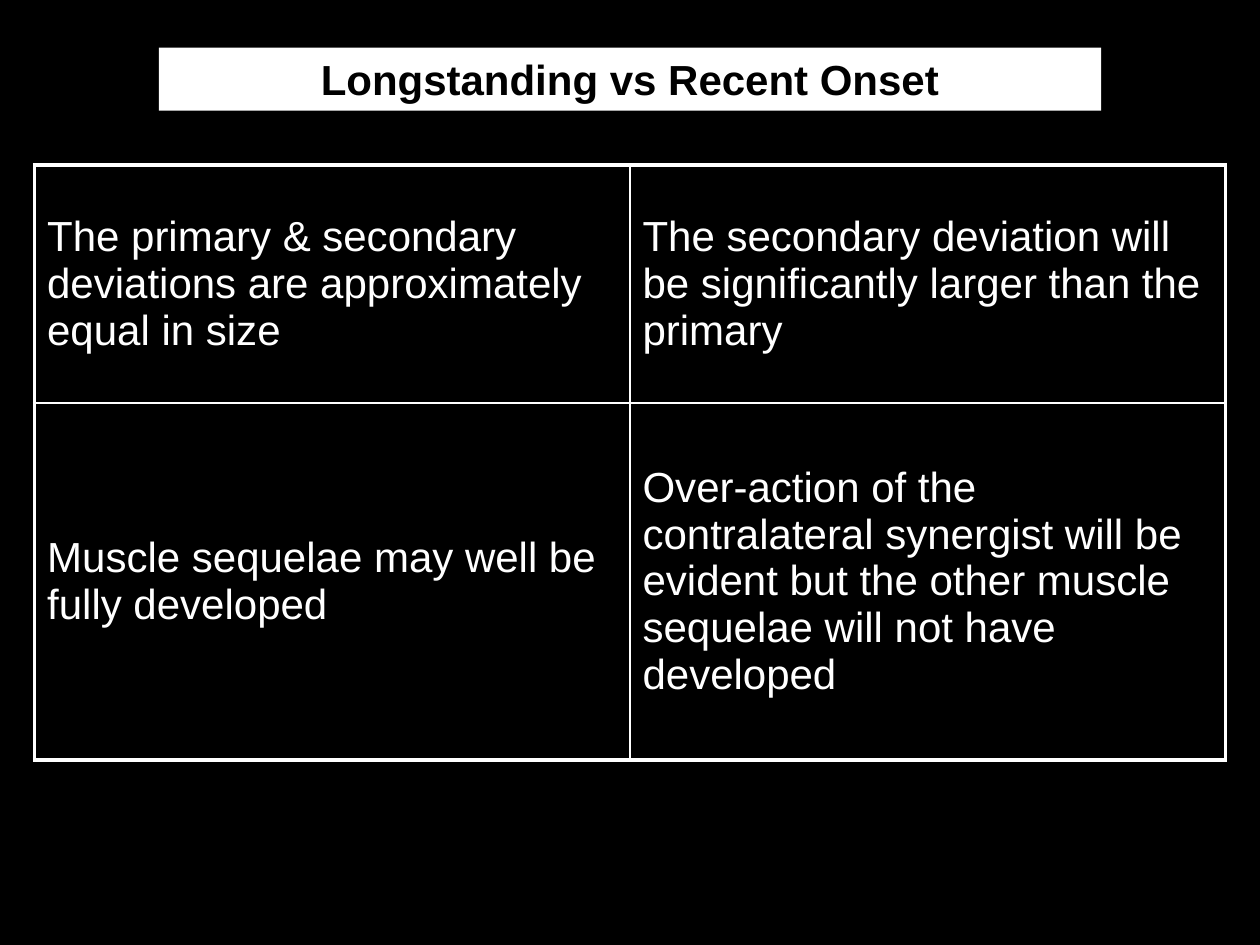
from lxml.etree import SubElement
from pptx import Presentation
from pptx.dml.color import RGBColor
from pptx.enum.text import MSO_ANCHOR as ANCHOR, PP_ALIGN as ALIGN
from pptx.oxml.ns import qn
from pptx.util import Pt

BLACK = RGBColor(0x00, 0x00, 0x00)
WHITE = RGBColor(0xFF, 0xFF, 0xFF)
FONT = "Arial"
SIZE = 24
OUTER, INNER = 2.25, 1

ROWS = [
    ["The primary & secondary deviations are approximately equal in size",
     "The secondary deviation will be significantly larger than the primary"],
    ["Muscle sequelae may well be fully developed",
     "Over-action of the contralateral synergist will be evident but the "
     "other muscle sequelae will not have developed"],
]


def write(tf, text, color=WHITE, bold=False, align=ALIGN.LEFT):
    p = tf.paragraphs[0]
    p.alignment = align
    p.line_spacing = 1.0
    p.space_before = Pt(0)
    r = p.add_run()
    r.text = text
    r.font.name, r.font.size, r.font.bold = FONT, Pt(SIZE), bold
    r.font.color.rgb = color


def add_border(cell, side, width):
    ln = SubElement(cell._tc.get_or_add_tcPr(), qn(f"a:ln{side}"),
                    w=str(Pt(width)))
    fill = SubElement(ln, qn("a:solidFill"))
    SubElement(fill, qn("a:srgbClr"), val=str(WHITE))


class Deck:
    def __init__(self):
        self.prs = Presentation()
        self.prs.slide_width, self.prs.slide_height = Pt(720), Pt(540)

    def add_slide(self):
        self.s = self.prs.slides.add_slide(self.prs.slide_layouts[5])
        fill = self.s.background.fill
        fill.solid()
        fill.fore_color.rgb = BLACK

    def title(self, text, left, top, width, height):
        sp = self.s.shapes.title
        sp.left, sp.top = Pt(left), Pt(top)
        sp.width, sp.height = Pt(width), Pt(height)
        sp.fill.solid()
        sp.fill.fore_color.rgb = WHITE
        tf = sp.text_frame
        tf.vertical_anchor = ANCHOR.MIDDLE
        write(tf, text, BLACK, bold=True, align=ALIGN.CENTER)

    def table(self, rows, left, top, col_width, heights):
        n_rows, n_cols = len(rows), len(rows[0])
        table = self.s.shapes.add_table(
            n_rows, n_cols, Pt(left), Pt(top),
            Pt(col_width * n_cols), Pt(sum(heights))).table
        table.first_row = table.horz_banding = False
        for col in table.columns:
            col.width = Pt(col_width)
        for i, (texts, height) in enumerate(zip(rows, heights)):
            table.rows[i].height = Pt(height)
            for j, text in enumerate(texts):
                cell = table.cell(i, j)
                cell.vertical_anchor = ANCHOR.MIDDLE
                write(cell.text_frame, text)
                # Thick outside edges, thin inside ones
                on_edge = {"L": j == 0, "R": j == n_cols - 1,
                           "T": i == 0, "B": i == n_rows - 1}
                for side, outside in on_edge.items():
                    add_border(cell, side, OUTER if outside else INNER)
                cell.fill.background()


def main():
    deck = Deck()
    deck.add_slide()
    # Heading
    deck.title("Longstanding vs Recent Onset", 90.75, 27.25, 538.5, 36)
    # Comparison table
    deck.table(ROWS, 19.75, 94.25, 340.25, [136, 204])
    deck.prs.save("out.pptx")


if __name__ == "__main__":
    main()
